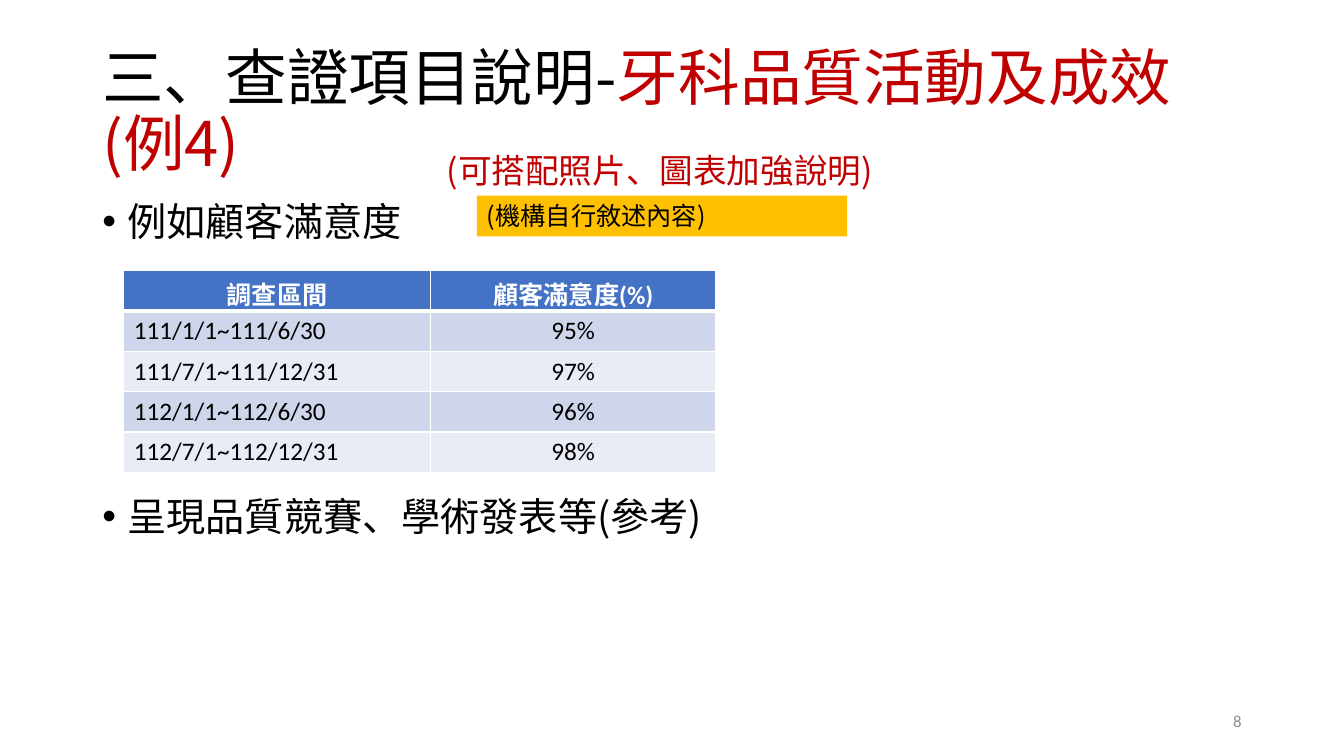
from pptx import Presentation
from pptx.dml.color import RGBColor
from pptx.enum.shapes import MSO_SHAPE as Shape
from pptx.enum.text import MSO_ANCHOR as Anchor, PP_ALIGN as Align
from pptx.oxml.ns import qn
from pptx.util import Pt
from lxml.etree import SubElement

BLACK = RGBColor(0x00, 0x00, 0x00)
WHITE = RGBColor(0xFF, 0xFF, 0xFF)
RED = RGBColor(0xC0, 0x00, 0x00)
AMBER = RGBColor(0xFF, 0xC0, 0x00)
GREY = RGBColor(0x8C, 0x8C, 0x8C)
BLUE = RGBColor(0x44, 0x72, 0xC4)
BANDS = [RGBColor(0xE9, 0xEB, 0xF5), RGBColor(0xCF, 0xD5, 0xEA)]
CJK = "Noto Sans CJK SC"
LATIN = "Calibri"


def add_run(paragraph, text, font_name, size, color, bold=False):
    run = paragraph.add_run()
    run.text = text
    formats = {"name": font_name, "size": Pt(size), "bold": bold}
    for key, value in formats.items():
        setattr(run.font, key, value)
    run.font.color.rgb = color
    if font_name == CJK:
        SubElement(run.font._element, qn("a:ea"), typeface=CJK)


def add_text(left, top, width, height, anchor=Anchor.TOP):
    frame = slide.shapes.add_textbox(Pt(left), Pt(top), Pt(width), Pt(height)).text_frame
    frame.word_wrap = True
    frame.vertical_anchor = anchor
    return frame


deck = Presentation()
deck.slide_width, deck.slide_height = Pt(960), Pt(540)
slide = deck.slides.add_slide(deck.slide_layouts[6])

# Title
title = add_text(66, 28.75, 828, 104.4, Anchor.MIDDLE).paragraphs[0]
title.line_spacing = 0.9
add_run(title, "三、查證項目說明-", CJK, 44, BLACK)
add_run(title, "牙科品質活動及成效(例4)", CJK, 44, RED)

# Bullets above and below the table
body = add_text(66, 141, 852.5, 378)
bullets = [("例如顧客滿意度", 0), ("呈現品質競賽、學術發表等(參考)", 180.5)]
for index, (text, gap) in enumerate(bullets):
    bullet = body.add_paragraph() if index else body.paragraphs[0]
    bullet.line_spacing = 0.9
    if gap:
        bullet.space_before = Pt(gap)
    layout = bullet._p.get_or_add_pPr()
    layout.set("marL", str(Pt(18)))
    layout.set("indent", str(Pt(-18)))
    SubElement(layout, qn("a:buFont"), typeface="Arial")
    SubElement(layout, qn("a:buChar"), char="•")
    add_run(bullet, text, CJK, 28, BLACK)

# Hint under the title
hint = add_text(312, 103.7, 360.7, 36.3).paragraphs[0]
add_run(hint, "(可搭配照片、圖表加強說明)", CJK, 24, RED)

# Amber label
label = slide.shapes.add_shape(Shape.RECTANGLE, Pt(340.7), Pt(139.8), Pt(264.5), Pt(29))
label.shadow.inherit = False
label.fill.solid()
label.fill.fore_color.rgb = AMBER
label.line.fill.background()
label.text_frame.word_wrap = True
label.text_frame.vertical_anchor = Anchor.TOP
label_text = label.text_frame.paragraphs[0]
label_text.alignment = Align.LEFT
add_run(label_text, "(機構自行敘述內容)", CJK, 18, BLACK)

# Satisfaction table
survey = [
    ("調查區間", "顧客滿意度(%)"),
    ("111/1/1~111/6/30", "95%"),
    ("111/7/1~111/12/31", "97%"),
    ("112/1/1~112/6/30", "96%"),
    ("112/7/1~112/12/31", "98%"),
]
table = slide.shapes.add_table(5, 2, Pt(88.5), Pt(193.2), Pt(423), Pt(144)).table
table.columns[0].width, table.columns[1].width = Pt(219), Pt(204)
for row, values in enumerate(survey):
    table.rows[row].height = Pt(28.8)
    header = row == 0
    for column, value in enumerate(values):
        cell = table.cell(row, column)
        entry = cell.text_frame.paragraphs[0]
        entry.alignment = Align.CENTER if header or column else Align.LEFT
        add_run(entry, value, LATIN, 18, WHITE if header else BLACK, header)
        # White borders, thicker between header and data
        borders = {"a:lnL": 1, "a:lnR": 1, "a:lnT": 3 if row == 1 else 1,
                   "a:lnB": 3 if header else 1}
        for side, weight in borders.items():
            border = SubElement(cell._tc.get_or_add_tcPr(), qn(side), w=str(Pt(weight)))
            SubElement(SubElement(border, qn("a:solidFill")), qn("a:srgbClr"), val=str(WHITE))
        cell.fill.solid()
        cell.fill.fore_color.rgb = BLUE if header else BANDS[row % 2]

# Slide number
number = add_text(678, 500.5, 216, 28.75, Anchor.MIDDLE).paragraphs[0]
number.alignment = Align.RIGHT
add_run(number, "8", LATIN, 12, GREY)

deck.save("out.pptx")
